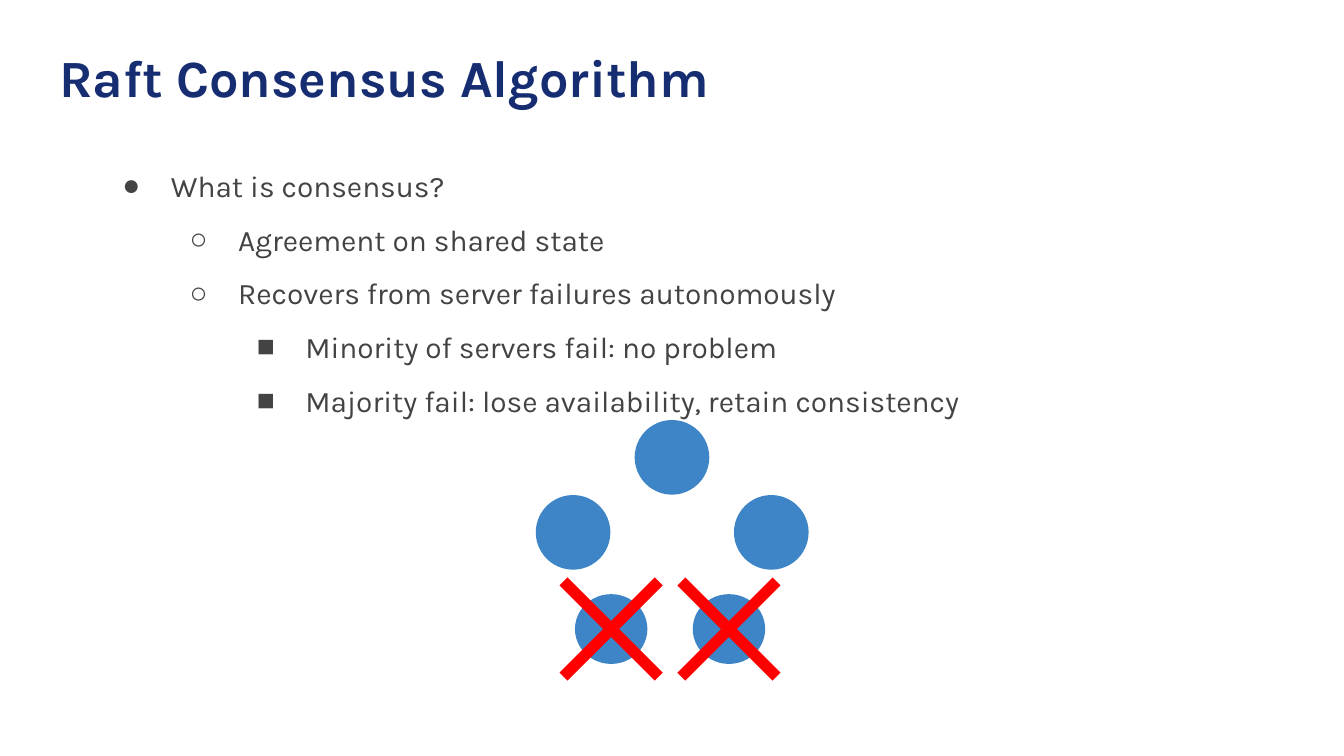
from lxml import etree
from pptx import Presentation
from pptx.dml.color import RGBColor
from pptx.enum.shapes import MSO_CONNECTOR, MSO_SHAPE
from pptx.enum.text import MSO_ANCHOR, MSO_AUTO_SIZE, PP_ALIGN
from pptx.oxml.ns import qn
from pptx.util import Pt

ELLIPSE, STRAIGHT = MSO_SHAPE.OVAL, MSO_CONNECTOR.STRAIGHT
TOP, LEFT = MSO_ANCHOR.TOP, PP_ALIGN.LEFT
NO_AUTOFIT = MSO_AUTO_SIZE.NONE

THEME = {
    "title": {"name": "Karla", "size": Pt(28), "bold": True, "color": "172D72"},
    "body": {"name": "Karla", "size": Pt(16), "bold": False, "color": "434343"},
    "bullet_font": "Arial",
    "server_fill": "3D85C6",
    "cross": "FF0000",
}

TITLE = "Raft Consensus Algorithm"
POINTS = [
    (0, "What is consensus?"),
    (1, "Agreement on shared state"),
    (1, "Recovers from server failures autonomously"),
    (2, "Minority of servers fail: no problem"),
    (2, "Majority fail: lose availability, retain consistency"),
]
BULLETS = "●○■"
LEVEL_INDENT, HANGING = 36, 26

# Boxes are left, top, width, height in points.
TITLE_BOX = (24.5, 17, 671, 45)
BODY_BOX = (48.4, 73, 582, 137.5)
# Server centres in points.
RUNNING_SERVERS = [(360, 245), (413.2, 285.2), (307, 285.2)]
FAILED_SERVERS = [(327.4, 337), (390.5, 337)]
RUNNING_SIZE, FAILED_SIZE = (40, 40), (38.8, 37.4)
CROSS_REACH, CROSS_WIDTH = 25.5, 6


def place(shape, box):
    shape.left, shape.top, shape.width, shape.height = map(Pt, box)


def style_font(font, style):
    for name in ("name", "size", "bold"):
        setattr(font, name, style[name])
    font.color.rgb = RGBColor.from_string(style["color"])


def format_frame(frame):
    values = {"word_wrap": True, "auto_size": NO_AUTOFIT, "vertical_anchor": TOP}
    values.update({f"margin_{side}": Pt(7.2) for side in ("left", "top", "right", "bottom")})
    for name, value in values.items():
        setattr(frame, name, value)


def add_bullet(paragraph, level):
    properties = paragraph._p.get_or_add_pPr()
    properties.set("marL", str(Pt(LEVEL_INDENT * (level + 1))))
    properties.set("indent", str(-Pt(HANGING)))
    color = etree.SubElement(properties, qn("a:buClr"))
    etree.SubElement(color, qn("a:srgbClr")).set("val", THEME["body"]["color"])
    etree.SubElement(properties, qn("a:buFont")).set("typeface", THEME["bullet_font"])
    etree.SubElement(properties, qn("a:buChar")).set("char", BULLETS[level])


def fill_title(title):
    place(title, TITLE_BOX)
    format_frame(title.text_frame)
    paragraph = title.text_frame.paragraphs[0]
    paragraph.text = TITLE
    paragraph.alignment = LEFT
    style_font(paragraph.runs[0].font, THEME["title"])


def fill_body(body):
    place(body, BODY_BOX)
    frame = body.text_frame
    format_frame(frame)
    for index, (level, text) in enumerate(POINTS):
        paragraph = frame.add_paragraph() if index else frame.paragraphs[0]
        paragraph.text = text
        paragraph.level = level
        add_bullet(paragraph, level)
        paragraph.line_spacing = 1.5
        paragraph.space_before = Pt(0)
        style_font(paragraph.runs[0].font, THEME["body"])


def add_server(shapes, center, size):
    (x, y), (width, height) = center, size
    box = (x - width / 2, y - height / 2, width, height)
    server = shapes.add_shape(ELLIPSE, *map(Pt, box))
    server.shadow.inherit = False
    server.fill.solid()
    server.fill.fore_color.rgb = RGBColor.from_string(THEME["server_fill"])
    server.line.fill.background()


def add_cross(shapes, center):
    x, y = center
    group = shapes.add_group_shape()
    for slope in (1, -1):
        rise = slope * CROSS_REACH
        ends = (x - CROSS_REACH, y - rise, x + CROSS_REACH, y + rise)
        stroke = group.shapes.add_connector(STRAIGHT, *map(Pt, ends))
        stroke.line.color.rgb = RGBColor.from_string(THEME["cross"])
        stroke.line.width = Pt(CROSS_WIDTH)
        etree.SubElement(stroke._element.spPr, qn("a:effectLst"))


def main():
    presentation = Presentation()
    presentation.slide_width, presentation.slide_height = Pt(720), Pt(405)
    slide = presentation.slides.add_slide(presentation.slide_layouts[1])
    fill_title(slide.shapes.title)
    fill_body(slide.placeholders[1])
    for center in RUNNING_SERVERS:
        add_server(slide.shapes, center, RUNNING_SIZE)
    for center in FAILED_SERVERS:
        add_server(slide.shapes, center, FAILED_SIZE)
        add_cross(slide.shapes, center)
    presentation.save("out.pptx")


if __name__ == "__main__":
    main()
